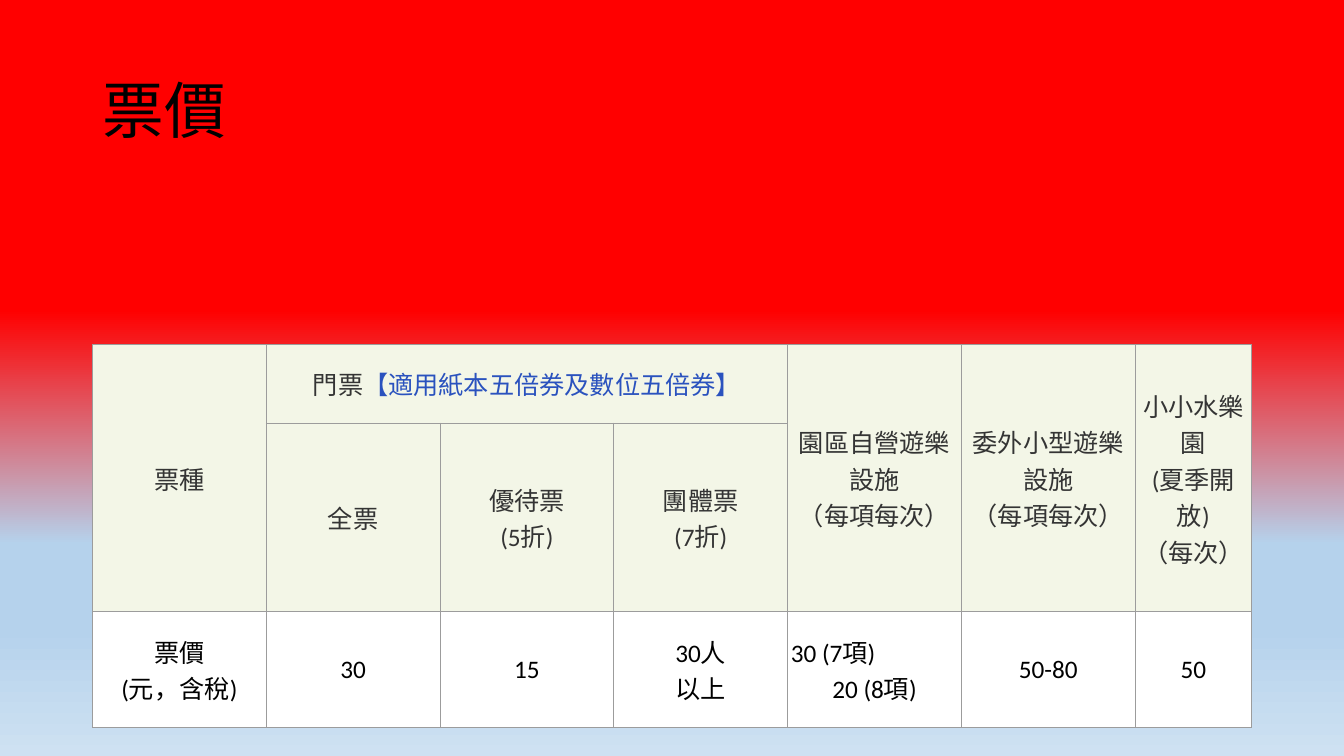
import copy
import pptx
import pptx.dml.color
import pptx.enum.text
import pptx.oxml
import pptx.oxml.ns
import pptx.util
from dataclasses import dataclass

Cm, Pt = pptx.util.Cm, pptx.util.Pt
Align = pptx.enum.text.PP_ALIGN
Anchor = pptx.enum.text.MSO_ANCHOR
qn = pptx.oxml.ns.qn


@dataclass(frozen=True)
class Theme:
    font: str = "Calibri"
    head: int = 44
    body: int = 18
    black: str = "000000"
    gray: str = "343434"
    blue: str = "2A52BE"
    cream: str = "F3F6E7"
    white: str = "FFFFFF"
    rule: str = "9C9C9C"
    sky: tuple = ((0.41, "FF0000"), (0.72, "B5D2EC"),
                  (0.83, "B5D2EC"), (1, "CEE1F2"))


theme = Theme()
rgb = pptx.dml.color.RGBColor.from_string


def style(para, size, color, align):
    para.alignment = align
    for run in para.runs:
        run.font.name = theme.font
        run.font.size = Pt(size)
        run.font.bold = False
        run.font.color.rgb = rgb(color)


def border(cell):
    """Draw a thin rule on all four sides; lines must come before the fill."""
    props = cell._tc.get_or_add_tcPr()
    for spot, side in enumerate("LRTB"):
        props.insert(spot, pptx.oxml.parse_xml(
            f'<a:ln{side} {pptx.oxml.ns.nsdecls("a")} w="{Pt(0.75)}">'
            f'<a:solidFill><a:srgbClr val="{theme.rule}"/></a:solidFill>'
            f'</a:ln{side}>'))


deck = pptx.Presentation()
deck.slide_width, deck.slide_height = Cm(33.87), Cm(19.05)
slide = deck.slides.add_slide(deck.slide_layouts[5])

# Background
back = slide.background.fill
back.gradient()
back.gradient_angle = 270
stops = slide.element.find(".//" + qn("a:gsLst"))
while len(stops) < len(theme.sky):
    stops.append(copy.deepcopy(stops[0]))
for stop, (place, color) in zip(back.gradient_stops, theme.sky):
    stop.position = place
    stop.color.rgb = rgb(color)

# Title
title = slide.shapes.title
title.left, title.top = Cm(2.33), Cm(1.01)
title.width, title.height = Cm(29.21), Cm(3.68)
title.text_frame.text = "票價"
title.text_frame.vertical_anchor = Anchor.MIDDLE
title.text_frame.paragraphs[0].line_spacing = 0.9
style(title.text_frame.paragraphs[0], theme.head, theme.black, Align.LEFT)

# Price table
rows = [
    ["票種", "門票", "", "", "園區自營遊樂設施\v（每項每次）",
     "委外小型遊樂設施\v（每項每次）", "小小水樂園\v(夏季開放)\v（每次）"],
    ["", "全票", "優待票\v(5折)", "團體票\v(7折)", "", "", ""],
    ["票價\v(元，含稅)", "30", "15", "30人\v以上",
     "30 (7項)\n20 (8項)", "50-80", "50"],
]
wide = [4.38] * 6 + [2.93]
tall = [1.98, 4.76, 2.9]
table = slide.shapes.add_table(
    len(tall), len(wide), Cm(2.33), Cm(8.68),
    Cm(sum(wide)), Cm(sum(tall))).table
table.first_row = table.horz_banding = False
for col, width in zip(table.columns, wide):
    col.width = Cm(width)
for row, height in zip(table.rows, tall):
    row.height = Cm(height)

for r, texts in enumerate(rows):
    last = r == len(rows) - 1
    for c, text in enumerate(texts):
        cell = table.cell(r, c)
        cell.fill.solid()
        cell.fill.fore_color.rgb = rgb(theme.white if last else theme.cream)
        border(cell)
        cell.margin_left = cell.margin_right = Cm(0.08)
        cell.margin_top = cell.margin_bottom = Cm(0.08)
        cell.vertical_anchor = Anchor.MIDDLE
        if text:
            cell.text_frame.text = text
        for para in cell.text_frame.paragraphs:
            style(para, theme.body, theme.black if last else theme.gray,
                  Align.CENTER)

for c in (0, 4, 5, 6):
    table.cell(0, c).merge(table.cell(1, c))
gate = table.cell(0, 1)
gate.merge(table.cell(0, 3))
note = gate.text_frame.paragraphs[0]
note.add_run().text = "【適用紙本五倍券及數位五倍券】"
style(note, theme.body, theme.blue, Align.CENTER)
note.runs[0].font.color.rgb = rgb(theme.gray)
table.cell(2, 4).text_frame.paragraphs[0].alignment = Align.LEFT

deck.save("out.pptx")
